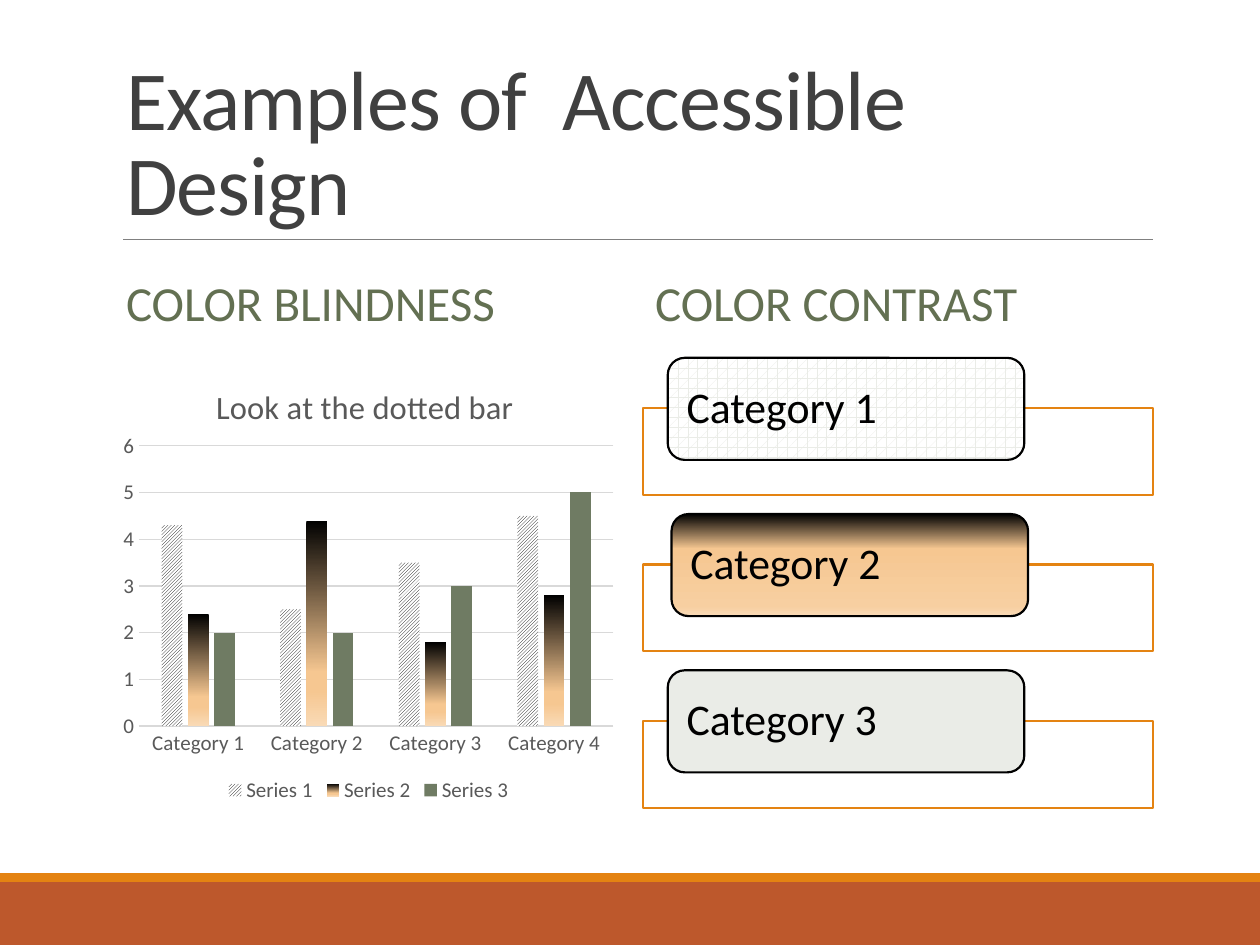
from lxml.etree import SubElement
from pptx import Presentation
from pptx.chart.data import CategoryChartData
from pptx.dml.color import RGBColor
from pptx.enum.chart import XL_CHART_TYPE, XL_LEGEND_POSITION, XL_TICK_MARK
from pptx.enum.dml import MSO_PATTERN
from pptx.enum.shapes import MSO_CONNECTOR, MSO_SHAPE
from pptx.enum.text import MSO_ANCHOR, MSO_AUTO_SIZE, PP_ALIGN
from pptx.oxml.ns import qn
from pptx.util import Inches, Pt

FONT = "Calibri"
LEFT, RIGHT_COLUMN, COLUMN_WIDTH = 0.9, 5.1, 4.05
ORANGE, RUST, GREEN, PALE_GREEN, GREY = "E48312", "BD582C", "6F7B63", "EAECE7", "595959"


def color(target, value):
    """Give a fill (made solid) or a font a hex colour."""
    if hasattr(target, "solid"):
        target.solid()
        target.fore_color.rgb = RGBColor.from_string(value)
    else:
        target.color.rgb = RGBColor.from_string(value)


def downward_gradient(fill, properties, stops):
    """Fill from top to bottom with (percent, hex) stops."""
    fill.gradient()
    fill.gradient_angle = 270
    stop_list = properties.find(".//" + qn("a:gsLst"))
    for old_stop in list(stop_list):
        stop_list.remove(old_stop)
    for percent, value in stops:
        stop = SubElement(stop_list, qn("a:gs"), pos=str(percent * 1000))
        SubElement(stop, qn("a:srgbClr"), val=value)


presentation = Presentation()
presentation.slide_width, presentation.slide_height = Inches(10), Inches(7.5)
slide = presentation.slides.add_slide(presentation.slide_layouts[4])
shapes = slide.shapes

# Footer bands and title rule
for top, height, value in [(7, 0.5, RUST), (6.93, 0.07, ORANGE)]:
    band = shapes.add_shape(MSO_SHAPE.RECTANGLE, 0, Inches(top), Inches(10), Inches(height))
    band.shadow.inherit = False
    color(band.fill, value)
    band.line.fill.background()
rule = shapes.add_connector(MSO_CONNECTOR.STRAIGHT, Inches(0.98), Inches(1.9), Inches(9.15), Inches(1.9))
color(rule.line.fill, "808080")
rule.line.width = Pt(0.5)
SubElement(rule._element.spPr, qn("a:effectLst"))

# Title and column headings
headings = [
    (0, "Examples of  Accessible Design", LEFT, 0.31, 8.25, 1.59, 48, "404040"),
    (1, "COLOR BLINDNESS", LEFT, 2.02, COLUMN_WIDTH, 0.81, 28, "637052"),
    (3, "COLOR CONTRAST", RIGHT_COLUMN, 2.02, COLUMN_WIDTH, 0.81, 28, "637052"),
]
placeholders = {item.placeholder_format.idx: item for item in slide.placeholders}
for index, text, left, top, width, height, size, value in headings:
    heading = placeholders.pop(index)
    heading.left, heading.top = Inches(left), Inches(top)
    heading.width, heading.height = Inches(width), Inches(height)
    frame = heading.text_frame
    frame.text = text
    frame.auto_size = MSO_AUTO_SIZE.NONE
    frame.vertical_anchor = MSO_ANCHOR.BOTTOM if index == 0 else MSO_ANCHOR.MIDDLE
    paragraph = frame.paragraphs[0]
    paragraph.alignment = PP_ALIGN.LEFT
    paragraph.line_spacing = 0.85 if index == 0 else 0.9
    paragraph.space_before = Pt(0 if index == 0 else 12)
    paragraph.space_after = Pt(0 if index == 0 else 2)
    font = paragraph.runs[0].font
    font.name, font.size, font.bold = FONT, Pt(size), False
    color(font, value)
    if index == 0:
        paragraph.runs[0]._r.get_or_add_rPr().set("spc", "-50")
for unused in placeholders.values():
    unused._element.getparent().remove(unused._element)

# Column chart
data = CategoryChartData()
data.categories = [f"Category {number}" for number in range(1, 5)]
data.add_series("Series 1", (4.3, 2.5, 3.5, 4.5))
data.add_series("Series 2", (2.4, 4.4, 1.8, 2.8))
data.add_series("Series 3", (2, 2, 3, 5))
chart = shapes.add_chart(XL_CHART_TYPE.COLUMN_CLUSTERED, Inches(LEFT), Inches(2.82),
                         Inches(COLUMN_WIDTH), Inches(3.59), data).chart
chart.font.name, chart.font.size = FONT, Pt(12)
color(chart.font, GREY)
chart.has_title = True
chart.chart_title.text_frame.text = "Look at the dotted bar"
title_font = chart.chart_title.text_frame.paragraphs[0].runs[0].font
title_font.name, title_font.size, title_font.bold = FONT, Pt(18.6), False
color(title_font, GREY)
chart.has_legend = True
chart.legend.position = XL_LEGEND_POSITION.BOTTOM
chart.legend.include_in_layout = False
for axis in (chart.category_axis, chart.value_axis):
    axis.major_tick_mark = axis.minor_tick_mark = XL_TICK_MARK.NONE
value_axis = chart.value_axis
value_axis.minimum_scale, value_axis.maximum_scale, value_axis.major_unit = 0, 6, 1
value_axis.format.line.fill.background()
for line in (chart.category_axis.format.line, value_axis.major_gridlines.format.line):
    color(line.fill, "D9D9D9")
    line.width = Pt(0.75)

plot = chart.plots[0]
plot.gap_width, plot.overlap, plot.vary_by_categories = 219, -27, False
hatched, graded, plain = plot.series
hatched.format.fill.patterned()
hatched.format.fill.pattern = MSO_PATTERN.LIGHT_UPWARD_DIAGONAL
hatched.format.fill.fore_color.rgb = RGBColor.from_string("000000")
hatched.format.fill.back_color.rgb = RGBColor.from_string("FFFFFF")
downward_gradient(graded.format.fill, graded._element.spPr,
                  [(0, "000000"), (74, "F6C791"), (83, "F6C791"), (100, "F9DAB6")])
color(plain.format.fill, GREEN)

# Fixed places of the chart title and the plot, as shares of the chart
chart_title = chart.chart_title._element
plot_area = chart._chartSpace.chart.plotArea
for parent, position, places in [
    (chart_title, 1, {"xMode": "edge", "yMode": "edge", "x": 0.19, "y": 0.05}),
    (plot_area, 0, {"layoutTarget": "inner", "xMode": "edge", "yMode": "edge",
                    "x": 0.05, "y": 0.2, "w": 0.93, "h": 0.62}),
]:
    for old_layout in parent.findall(qn("c:layout")):
        parent.remove(old_layout)
    layout = SubElement(parent, qn("c:layout"))
    parent.insert(position, layout)
    manual = SubElement(layout, qn("c:manualLayout"))
    for name, share in places.items():
        SubElement(manual, qn(f"c:{name}"), val=str(share))

# Category labels over outlined boxes
for row in range(3):
    box_top = 3.24 + 1.24 * row
    box = shapes.add_shape(MSO_SHAPE.RECTANGLE, Inches(RIGHT_COLUMN), Inches(box_top),
                           Inches(COLUMN_WIDTH), Inches(0.69))
    color(box.fill, "FFFFFF")
    opaque = box._element.spPr.find(qn("a:solidFill"))[0]
    SubElement(opaque, qn("a:alpha"), val="90000")
    label = shapes.add_shape(MSO_SHAPE.ROUNDED_RECTANGLE, Inches(5.33 if row == 1 else 5.3),
                             Inches(box_top - 0.4), Inches(2.83), Inches(0.81))
    for shape, value in [(box, ORANGE), (label, "000000")]:
        shape.shadow.inherit = False
        color(shape.line.fill, value)
        shape.line.width = Pt(1.25)
    if row == 0:
        label.fill.patterned()
        label.fill.pattern = MSO_PATTERN.PLAID
        label.fill.fore_color.rgb = RGBColor.from_string(PALE_GREEN)
        label.fill.back_color.rgb = RGBColor.from_string("FFFFFF")
    elif row == 1:
        downward_gradient(label.fill, label._element.spPr,
                          [(0, "000000"), (34, "F6C791"), (90, "F7CFA1"), (100, "F9DAB6")])
    else:
        color(label.fill, PALE_GREEN)
    frame = label.text_frame
    frame.text = f"Category {row + 1}"
    frame.word_wrap = True
    frame.vertical_anchor = MSO_ANCHOR.MIDDLE
    frame.margin_left = frame.margin_right = Inches(0.11)
    frame.margin_top = frame.margin_bottom = 0
    paragraph = frame.paragraphs[0]
    paragraph.alignment = PP_ALIGN.LEFT
    paragraph.line_spacing = 0.9
    font = paragraph.runs[0].font
    font.name, font.size = FONT, Pt(25)
    color(font, "000000")

presentation.save("out.pptx")
